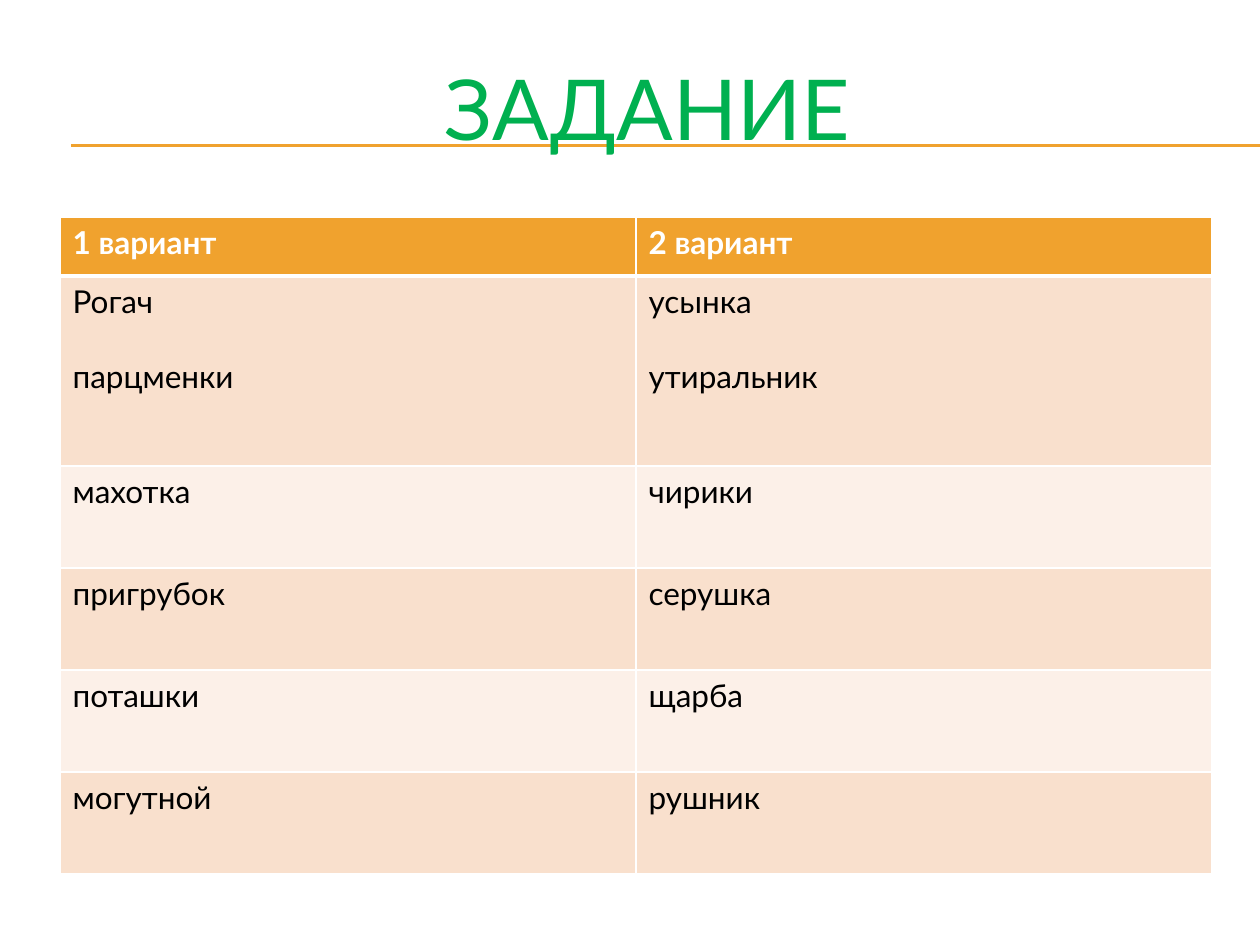
import pptx
import pptx.dml.color
import pptx.enum.shapes
import pptx.enum.text
import pptx.oxml
import pptx.oxml.ns
import pptx.util
from lxml import etree

PX = 914400 / 126
HEX = {"amber": "F0A22E", "green": "00B050", "white": "FFFFFF",
       "black": "000000", "dark": "F9E0CD", "light": "FCF0E8"}
HEAD = ["1 вариант", "2 вариант"]
ROWS = [
    ["Рогач\nпарцменки", "усынка\nутиральник"],
    ["махотка", "чирики"],
    ["пригрубок", "серушка"],
    ["поташки", "щарба"],
    ["могутной", "рушник"],
]


def emu(px):
    return pptx.util.Emu(round(px * PX))


def rgb(name):
    return pptx.dml.color.RGBColor.from_string(HEX[name])


class Deck:
    face = "Lato"

    def __init__(self, wide, high):
        self.prs = pptx.Presentation()
        self.prs.slide_width, self.prs.slide_height = emu(wide), emu(high)
        self.slide = self.prs.slides.add_slide(self.prs.slide_layouts[5])

    def font(self, para, size, color, bold=False):
        font = para.font
        font.name, font.size, font.bold = self.face, pptx.util.Pt(size), bold
        font.color.rgb = rgb(color)

    def rule(self, x1, x2, y):
        line = self.slide.shapes.add_connector(
            pptx.enum.shapes.MSO_CONNECTOR.STRAIGHT,
            emu(x1), emu(y), emu(x2), emu(y))
        line.line.color.rgb = rgb("amber")
        line.line.width = pptx.util.Pt(0.75)
        etree.SubElement(line.element.spPr, pptx.oxml.ns.qn("a:effectLst"))

    def title(self, text, x, y, w, h):
        """Fill the title and bring it in front of the rules."""
        box = self.slide.shapes.title
        box.left, box.top, box.width, box.height = map(emu, (x, y, w, h))
        frame = box.text_frame
        frame.text = text
        frame.vertical_anchor = pptx.enum.text.MSO_ANCHOR.MIDDLE
        para = frame.paragraphs[0]
        para.alignment = pptx.enum.text.PP_ALIGN.CENTER
        self.font(para, 48, "green")
        self.slide.shapes.element.append(box.element)

    def edge(self, cell, side, width):
        props = cell._tc.get_or_add_tcPr()
        props.append(pptx.oxml.parse_xml(
            f'<a:ln{side} {pptx.oxml.ns.nsdecls("a")} w="{pptx.util.Pt(width)}">'
            f'<a:solidFill><a:srgbClr val="{HEX["white"]}"/></a:solidFill>'
            f'</a:ln{side}>'))

    def cell(self, cell, text, row):
        head = row == 0
        for side in "LRTB":
            thick = (head and side == "B") or (row == 1 and side == "T")
            self.edge(cell, side, 3 if thick else 1)
        cell.fill.solid()
        cell.fill.fore_color.rgb = rgb(
            "amber" if head else "dark" if row % 2 else "light")
        cell.text_frame.text = text
        for i, para in enumerate(cell.text_frame.paragraphs):
            self.font(para, 18, "white" if head else "black", head)
            if i:
                para.space_before = pptx.util.Pt(21.6)

    def table(self, data, x, y, wide, high):
        grid = self.slide.shapes.add_table(
            len(data), len(wide), emu(x), emu(y),
            emu(sum(wide)), emu(sum(high))).table
        for col, w in zip(grid.columns, wide):
            col.width = emu(w)
        for r, (texts, h) in enumerate(zip(data, high)):
            grid.rows[r].height = emu(h)
            for c, text in enumerate(texts):
                self.cell(grid.cell(r, c), text, r)


def main():
    deck = Deck(1260, 945)
    for y in (145, 146):
        deck.rule(71, 1260, y)
    deck.title("ЗАДАНИЕ", 49, 29, 1197, 155)
    deck.table([HEAD] + ROWS, 60, 217, [576] * 2, [59, 190] + [102] * 4)
    deck.prs.save("out.pptx")


if __name__ == "__main__":
    main()
